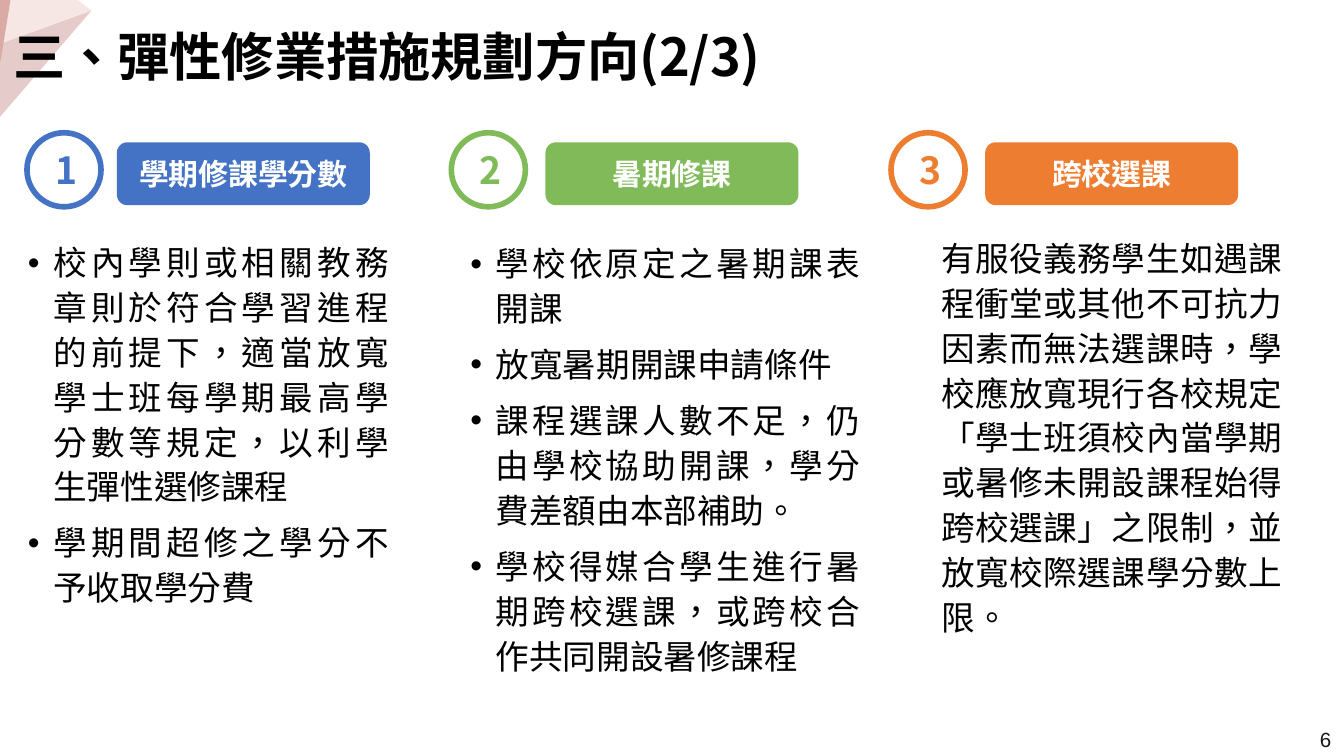
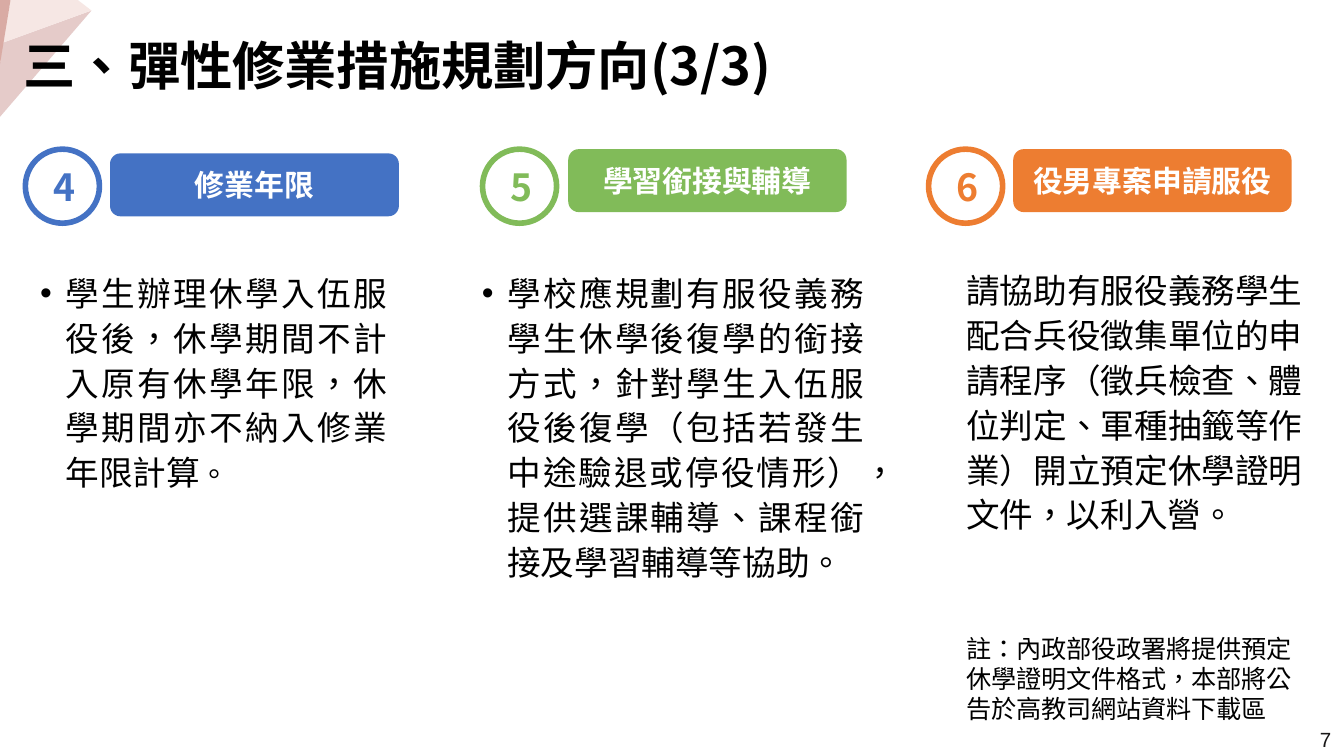
from dataclasses import dataclass
from typing import Optional

from lxml.etree import SubElement
from pptx import Presentation
from pptx.dml.color import RGBColor
from pptx.enum.shapes import MSO_SHAPE
from pptx.enum.text import MSO_ANCHOR, MSO_AUTO_SIZE, PP_ALIGN
from pptx.oxml.ns import qn
from pptx.util import Cm, Pt

COLORS = {
    "blue": "4472C4", "green": "81BB59", "orange": "ED7D31",
    "white": "FFFFFF", "black": "000000", "page": "181717",
    "rose": "E5CBC9", "pale": "F6E7E4", "dusk": "D9ABA4",
}
CJK_FONT = "Noto Sans CJK SC"
BADGE_SIZE = 1.4
LABEL_HEIGHT = 1.19
HANGING = Cm(0.48)

# Corner decoration: colour and corners in cm
FACETS = [
    ("rose", [(1.73, 0.2), (0.05, 0.81), (0, 1.22), (0, 2.21)]),
    ("pale", [(1.73, 0.2), (1.47, 0), (0.2, 0), (0.05, 0.81)]),
    ("dusk", [(0.2, 0), (0, 0), (0, 1.22)]),
]


@dataclass(frozen=True)
class Box:
    left: float
    top: float
    width: float
    height: float

    def lengths(self) -> tuple:
        return Cm(self.left), Cm(self.top), Cm(self.width), Cm(self.height)


@dataclass(frozen=True)
class Measure:
    number: int
    heading: str
    color: str
    badge_left: float
    label_left: float
    label_top: float
    label_width: float
    body: Box
    points: tuple
    bulleted: bool = True
    small_end: str = ""


@dataclass(frozen=True)
class Page:
    number: int
    title: str
    title_box: Box
    badge_top: float
    measures: tuple
    note: Optional[str] = None


PAGES = [
    Page(6, "三、彈性修業措施規劃方向(2/3)", Box(0, 0.3, 24.79, 1.65), 2.51, (
        Measure(1, "學期修課學分數", "blue", 0.51, 2.21, 2.69, 4.78,
                Box(0.28, 4.37, 7.32, 7.24),
                ("校內學則或相關教務章則於符合學習進程的前提下，適當放寬學士班每學期最高學分數等規定，以利學生彈性選修課程",
                 "學期間超修之學分不予收取學分費")),
        Measure(2, "暑期修課", "green", 8.53, 10.31, 2.69, 4.78,
                Box(8.64, 4.39, 7.87, 8.53),
                ("學校依原定之暑期課表開課",
                 "放寬暑期開課申請條件",
                 "課程選課人數不足，仍由學校協助開課，學分費差額由本部補助。",
                 "學校得媒合學生進行暑期跨校選課，或跨校合作共同開設暑修課程")),
        Measure(3, "跨校選課", "orange", 16.84, 18.62, 2.69, 4.78,
                Box(17.55, 4.29, 6.93, 7.87),
                ("有服役義務學生如遇課程衝堂或其他不可抗力因素而無法選課時，學校應放寬現行各校規定"
                 "「學士班須校內當學期或暑修未開設課程始得跨校選課」之限制，並放寬校際選課學分數上限。",),
                bulleted=False),
    )),
    Page(7, "三、彈性修業措施規劃方向(3/3)", Box(0.2, 0.46, 24.79, 1.65), 2.82, (
        Measure(4, "修業年限", "blue", 0.48, 2.08, 2.9, 5.46,
                Box(0.51, 4.95, 7.06, 4.47),
                ("學生辦理休學入伍服役後，休學期間不計入原有休學年限，休學期間亦不納入修業年限計算",),
                small_end="。"),
        Measure(5, "學習銜接與輔導", "green", 9.12, 10.74, 2.82, 5.26,
                Box(8.86, 4.95, 7.72, 6.25),
                ("學校應規劃有服役義務學生休學後復學的銜接方式，針對學生入伍服役後復學"
                 "（包括若發生中途驗退或停役情形），提供選課輔導、課程銜接及學習輔導等協助。",)),
        Measure(6, "役男專案申請服役", "orange", 17.55, 19.15, 2.82, 5.26,
                Box(18.01, 4.9, 6.86, 5.31),
                ("請協助有服役義務學生配合兵役徵集單位的申請程序"
                 "（徵兵檢查、體位判定、軍種抽籤等作業）開立預定休學證明文件，以利入營。",),
                bulleted=False),
    ), note="註：內政部役政署將提供預定休學證明文件格式，本部將公告於高教司網站資料下載區"),
]
NOTE_BOX = Box(18.01, 11.84, 6.86, 1.98)
PAGE_NUMBER_BOX = Box(19.69, 13.61, 5.72, 0.76)


def rgb(color: str) -> RGBColor:
    return RGBColor.from_string(COLORS[color])


def style_run(run, size: float, color: str = "black", bold: bool = False,
              font: str = CJK_FONT) -> None:
    run.font.size = Pt(size)
    run.font.bold = bold
    run.font.name = font
    run.font.color.rgb = rgb(color)
    properties = run.font._element
    properties.set("lang", "zh-TW")
    SubElement(properties, qn("a:ea")).set("typeface", font)


def add_text(slide, box: Box, text: str, size: float, color: str = "black",
             bold: bool = False, font: str = CJK_FONT):
    """Add a wrapping one-paragraph text box and return its frame."""
    frame = slide.shapes.add_textbox(*box.lengths()).text_frame
    frame.word_wrap = True
    frame.text = text
    style_run(frame.paragraphs[0].runs[0], size, color, bold, font)
    return frame


def add_panel(slide, kind, box: Box, text: str, size: float, fill: str, ink: str):
    """Add a filled shape with bold centred text."""
    panel = slide.shapes.add_shape(kind, *box.lengths())
    panel.shadow.inherit = False
    panel.fill.solid()
    panel.fill.fore_color.rgb = rgb(fill)
    panel.line.fill.background()
    frame = panel.text_frame
    frame.word_wrap = True
    frame.vertical_anchor = MSO_ANCHOR.MIDDLE
    frame.text = text
    frame.paragraphs[0].alignment = PP_ALIGN.CENTER
    style_run(frame.paragraphs[0].runs[0], size, ink, bold=True)
    return panel


def add_bullet(paragraph) -> None:
    properties = paragraph._p.get_or_add_pPr()
    properties.set("marL", str(HANGING))
    properties.set("indent", str(-HANGING))
    SubElement(properties, qn("a:buFont")).set("typeface", "Arial")
    SubElement(properties, qn("a:buChar")).set("char", "•")


def add_body(slide, measure: Measure) -> None:
    frame = slide.shapes.add_textbox(*measure.body.lengths()).text_frame
    frame.word_wrap = True
    frame.auto_size = MSO_AUTO_SIZE.SHAPE_TO_FIT_TEXT
    for index, point in enumerate(measure.points):
        paragraph = frame.add_paragraph() if index else frame.paragraphs[0]
        paragraph.text = point
        if measure.bulleted:
            add_bullet(paragraph)
        paragraph.alignment = PP_ALIGN.JUSTIFY
        paragraph.line_spacing = Pt(24)
        if index:
            paragraph.space_before = Pt(6)
        style_run(paragraph.runs[0], 18)
    if measure.small_end:
        ending = paragraph.add_run()
        ending.text = measure.small_end
        style_run(ending, 16)


def add_measure(slide, measure: Measure, badge_top: float) -> None:
    # Numbered ring
    badge = add_panel(slide, MSO_SHAPE.OVAL,
                      Box(measure.badge_left, badge_top, BADGE_SIZE, BADGE_SIZE),
                      str(measure.number), 20, "white", measure.color)
    badge.line.color.rgb = rgb(measure.color)
    badge.line.width = Pt(3)
    frame = badge.text_frame
    frame.margin_left = frame.margin_right = Cm(0.33)
    frame.margin_top = frame.margin_bottom = Cm(0.18)

    # Heading bar and text
    add_panel(slide, MSO_SHAPE.ROUNDED_RECTANGLE,
              Box(measure.label_left, measure.label_top, measure.label_width, LABEL_HEIGHT),
              measure.heading, 16, measure.color, "white")
    add_body(slide, measure)


def add_corner(slide) -> None:
    for color, corners in FACETS:
        start, *rest = [(Cm(x), Cm(y)) for x, y in corners]
        builder = slide.shapes.build_freeform(*start)
        builder.add_line_segments(rest, close=True)
        facet = builder.convert_to_shape()
        facet.shadow.inherit = False
        facet.fill.solid()
        facet.fill.fore_color.rgb = rgb(color)
        facet.line.fill.background()


def add_page(deck, page: Page) -> None:
    slide = deck.slides.add_slide(deck.slide_layouts[6])

    # Shared frame: page number, corner, title
    footer = add_text(slide, PAGE_NUMBER_BOX, str(page.number), 11, "page", font="Arial")
    footer.paragraphs[0].alignment = PP_ALIGN.RIGHT
    add_corner(slide)
    title = add_text(slide, page.title_box, page.title, 28, bold=True)
    title.vertical_anchor = MSO_ANCHOR.MIDDLE
    title.paragraphs[0].line_spacing = Pt(30)

    # Columns
    for measure in page.measures:
        add_measure(slide, measure, page.badge_top)
    if page.note:
        note = add_text(slide, NOTE_BOX, page.note, 13.5)
        note.auto_size = MSO_AUTO_SIZE.SHAPE_TO_FIT_TEXT


def main() -> None:
    deck = Presentation()
    deck.slide_width, deck.slide_height = Cm(25.4), Cm(14.29)
    for page in PAGES:
        add_page(deck, page)
    deck.save("out.pptx")


if __name__ == "__main__":
    main()
